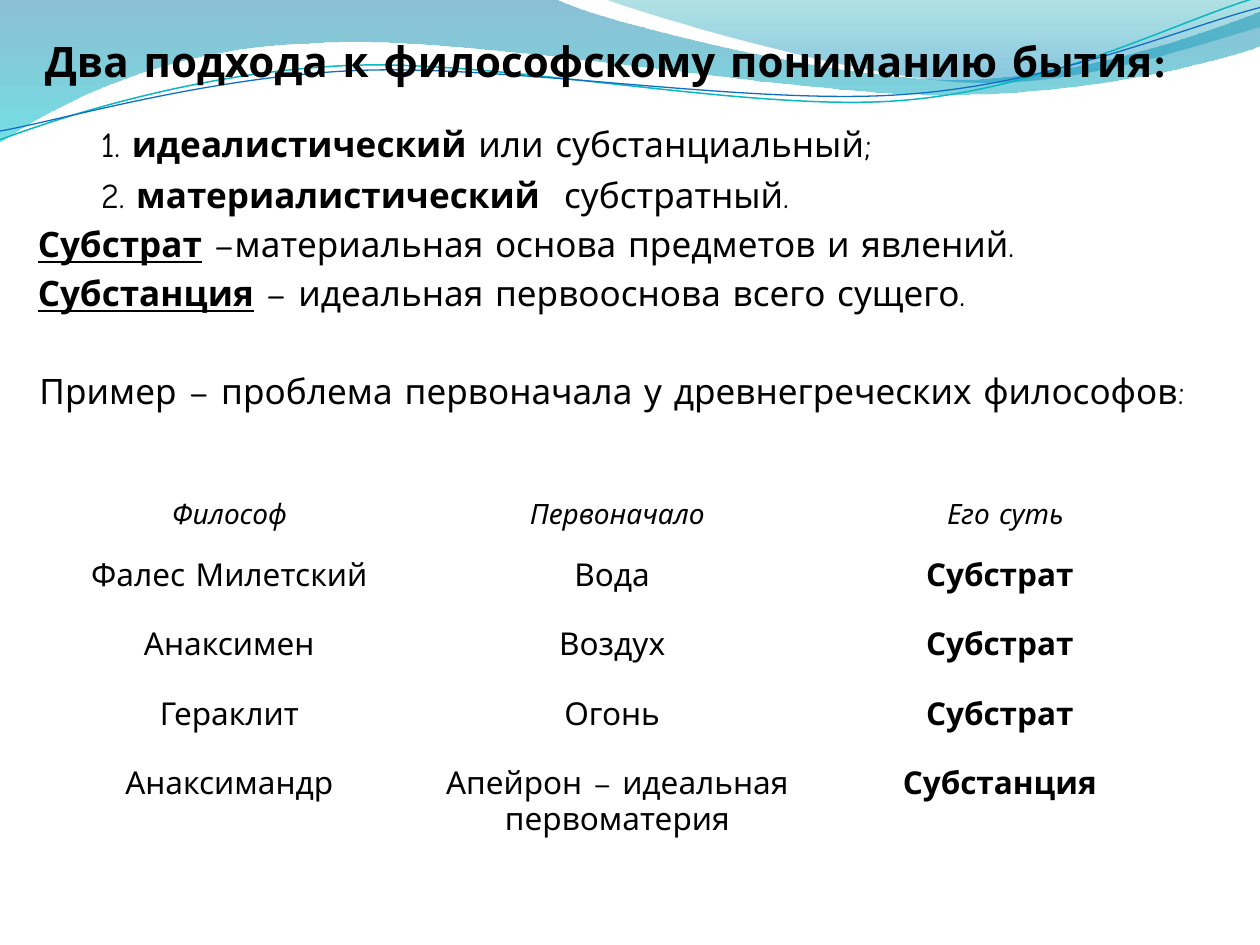
"""Build a slide on two philosophical approaches to being, with a table of philosophers."""
from dataclasses import dataclass

from lxml.etree import SubElement
from pptx import Presentation
from pptx.dml.color import RGBColor
from pptx.enum.text import MSO_ANCHOR, MSO_AUTO_SIZE, PP_ALIGN
from pptx.oxml.ns import qn
from pptx.util import Inches, Pt


@dataclass(frozen=True)
class Theme:
    text: str = "000000"
    font: str = "Comic Neue"
    second_font: str = "Times New Roman"
    title_size: int = 24
    tab_size: int = 26
    body_size: int = 20
    header_size: int = 16
    cell_size: int = 18
    back_wave: tuple = ((0, "0074A1", 45), (1, "00C6CF", 55))
    front_wave: tuple = ((0, "00A1A9", 30), (0.8, "008BBF", 45))
    teal_line: str = "0AB8BF"
    blue_line: str = "0F6FC6"


theme = Theme()


def add_text(paragraph, text, size=theme.body_size, font=theme.font, bold=False, italic=False, underline=False):
    run = paragraph.add_run()
    run.text = text
    run.font.size = Pt(size)
    run.font.name = font
    run.font.bold = bold
    run.font.italic = italic
    run.font.underline = underline
    run.font.color.rgb = RGBColor.from_string(theme.text)


def add_curved_shape(shapes, start, segments, closed):
    points = [
        (Inches(segment[i]), Inches(segment[i + 1]))
        for segment in segments for i in range(0, len(segment), 2)
    ]
    builder = shapes.build_freeform(Inches(start[0]), Inches(start[1]))
    builder.add_line_segments(points, close=closed)
    shape = builder.convert_to_shape()
    line_elements = iter(list(shape._element.iter(qn("a:lnTo"))))
    for segment in segments:
        first = next(line_elements)
        if len(segment) == 6:
            first.tag = qn("a:cubicBezTo")
            for _ in range(2):
                extra = next(line_elements)
                first.append(extra[0])
                extra.getparent().remove(extra)
    shape.shadow.inherit = False
    return shape


presentation = Presentation()
presentation.slide_width = Inches(10)
presentation.slide_height = Inches(7.5)
slide = presentation.slides.add_slide(presentation.slide_layouts[1])
title, body = slide.placeholders

waves = [
    ((0, 0), [(4.4, -0.01), (4.76, 0.17, 6.64, 0.63, 7.58, 0.63), (8.53, 0.63, 9.58, 0.26, 10, 0.09),
              (10.01, 0.36), (9.83, 0.44, 8.7, 0.76, 7.46, 0.75), (6.22, 0.75, 3.82, 0.28, 2.57, 0.34),
              (1.29, 0.36, 0.46, 0.83, -0.01, 1.13)], theme.back_wave, None, 0),
    ((4.79, -0.01), [(5.09, 0.11, 6.82, 0.62, 7.69, 0.65), (8.56, 0.69, 9.61, 0.32, 10, 0.21),
                     (10, 0)], theme.front_wave, None, 0),
    ((0, 1.11), [(0.48, 0.93, 1.58, 0.57, 2.77, 0.52), (3.95, 0.47, 5.93, 0.89, 7.13, 0.8),
                 (8.33, 0.71, 9.38, 0.15, 9.98, -0.02)], None, theme.teal_line, 0.85),
    ((0, 1.04), [(0.47, 0.96, 1.64, 0.61, 2.83, 0.56), (4.03, 0.51, 5.97, 0.84, 7.17, 0.75),
                 (8.36, 0.67, 9.41, 0.21, 10, 0.06)], None, theme.blue_line, 0.75),
]
for start, segments, gradient, line_color, line_width in waves:
    wave = add_curved_shape(slide.shapes, start, segments, closed=gradient is not None)
    if gradient:
        wave.fill.gradient()
        wave.fill.gradient_angle = 270
        for stop, (position, color, _) in zip(wave.fill.gradient_stops, gradient):
            stop.position = position
            stop.color.rgb = RGBColor.from_string(color)
        for color_element, (_, _, opacity) in zip(wave._element.spPr.iter(qn("a:srgbClr")), gradient):
            SubElement(color_element, qn("a:alpha")).set("val", str(opacity * 1000))
        wave.line.fill.background()
    else:
        wave.fill.background()
        wave.line.color.rgb = RGBColor.from_string(line_color)
        wave.line.width = Pt(line_width)
    title._element.addprevious(wave._element)

title.left, title.top, title.width, title.height = Inches(0.35), Inches(0.21), Inches(9), Inches(0.47)
title_frame = title.text_frame
title_frame.auto_size = MSO_AUTO_SIZE.NONE
title_frame.vertical_anchor = MSO_ANCHOR.BOTTOM
title_frame.margin_left = title_frame.margin_right = title_frame.margin_bottom = 0
title_frame.margin_top = Inches(0.05)
title_paragraph = title_frame.paragraphs[0]
title_paragraph.alignment = PP_ALIGN.CENTER
add_text(title_paragraph, "Два подхода к философскому пониманию бытия", size=theme.title_size, bold=True)
add_text(title_paragraph, ": ", size=theme.title_size, font=theme.second_font, bold=True)

body.left, body.top, body.width, body.height = Inches(0.2), Inches(0.84), Inches(9.31), Inches(5.67)
body.text_frame.auto_size = MSO_AUTO_SIZE.NONE
bold = {"bold": True}
term = {"bold": True, "underline": True}
tab = {"size": theme.tab_size, "font": theme.second_font}
body_lines = [
    (PP_ALIGN.JUSTIFY, 0, [("\t", tab), ("1. ", {}), ("идеалистический", bold), (" или субстанциальный;", {})]),
    (PP_ALIGN.JUSTIFY, 4, [("\t2. ", {}), ("материалистический ", bold), (" субстратный.", {})]),
    (PP_ALIGN.JUSTIFY, 4, [("Субстрат", term), (" –материальная основа предметов и явлений.", {})]),
    (PP_ALIGN.JUSTIFY, 4, [("Субстанция", term), (" – идеальная первооснова всего сущего.", {})]),
    (PP_ALIGN.CENTER, 32, [("Пример – проблема первоначала у древнегреческих философов: ", {})]),
]
for index, (alignment, space_before, pieces) in enumerate(body_lines):
    paragraph = body.text_frame.add_paragraph() if index else body.text_frame.paragraphs[0]
    properties = paragraph._p.get_or_add_pPr()
    properties.set("marL", "0")
    properties.set("indent", "0")
    SubElement(properties, qn("a:buNone"))
    tab_stop = SubElement(SubElement(properties, qn("a:tabLst")), qn("a:tab"))
    tab_stop.set("pos", str(Inches(1)))
    tab_stop.set("algn", "l")
    paragraph.alignment = alignment
    paragraph.space_before = Pt(space_before)
    for text, text_format in pieces:
        add_text(paragraph, text, **text_format)

rows = [
    ("Философ", "Первоначало", "Его суть"),
    ("Фалес Милетский", "Вода ", "Субстрат "),
    ("Анаксимен", "Воздух ", "Субстрат "),
    ("Гераклит", "Огонь ", "Субстрат "),
    ("Анаксимандр", "Апейрон – идеальная первоматерия", "Субстанция "),
]
row_heights = (0.47, 0.55, 0.55, 0.55, 0.75)
table = slide.shapes.add_table(
    len(rows), len(rows[0]), Inches(0.28), Inches(3.91), Inches(9.24), Inches(sum(row_heights))
).table
table.first_row = False
table.horz_banding = False
for column in table.columns:
    column.width = Inches(3.08)
for row_index, (texts, height) in enumerate(zip(rows, row_heights)):
    table.rows[row_index].height = Inches(height)
    is_header = row_index == 0
    for column_index, text in enumerate(texts):
        cell = table.cell(row_index, column_index)
        cell.fill.background()
        paragraph = cell.text_frame.paragraphs[0]
        paragraph.alignment = PP_ALIGN.CENTER
        add_text(paragraph, text, size=theme.header_size if is_header else theme.cell_size,
                 italic=is_header, bold=not is_header and column_index == 2)

presentation.save("out.pptx")
